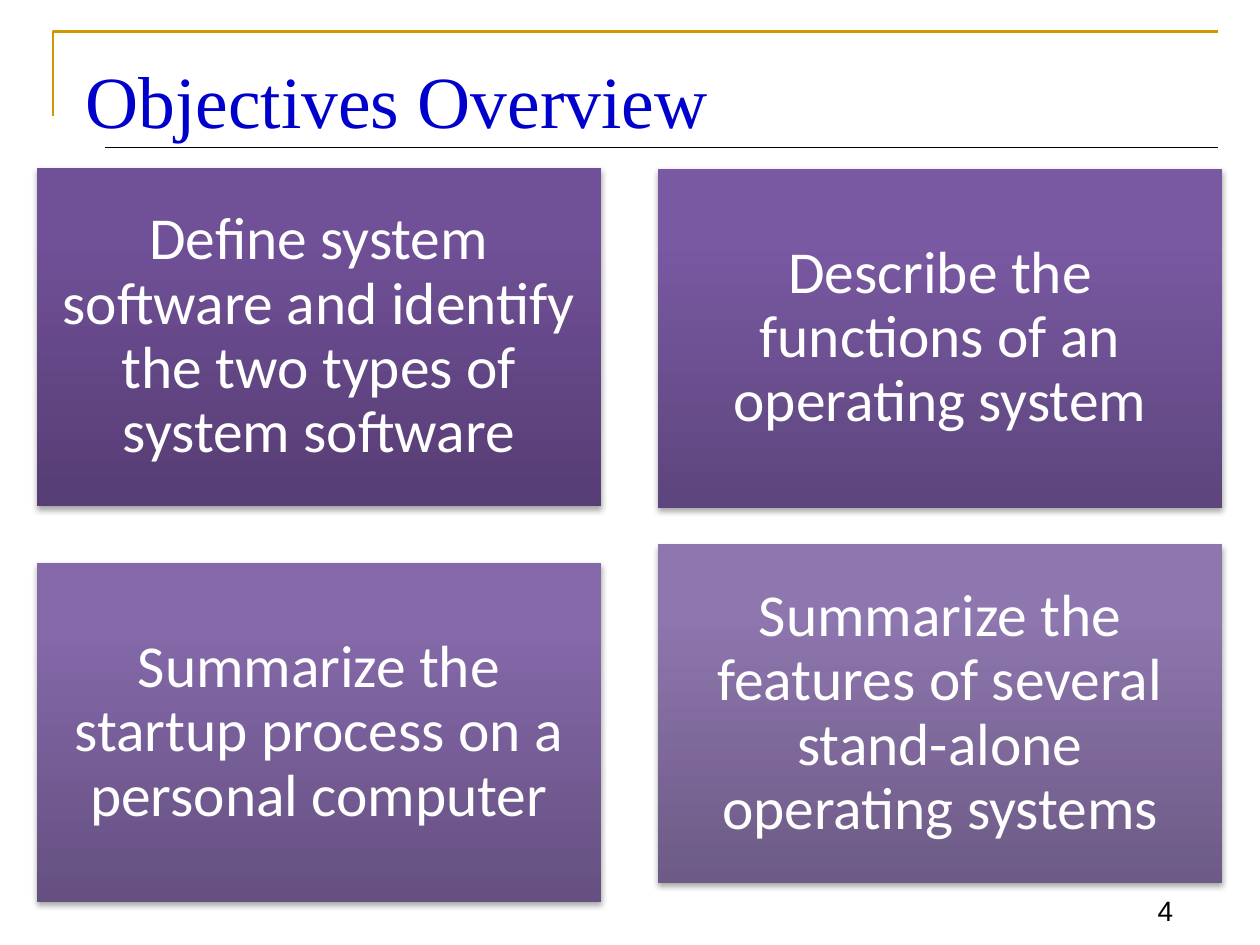
import copy
import pptx
import pptx.util
import pptx.oxml
import pptx.dml.color
import pptx.enum.shapes
import pptx.enum.text

Pt = pptx.util.Pt
RGB = pptx.dml.color.RGBColor
ALIGN = pptx.enum.text.PP_ALIGN
ANCHOR = pptx.enum.text.MSO_ANCHOR

GOLD = RGB(0xCC, 0x99, 0x00)
BLACK = RGB(0, 0, 0)
WHITE = RGB(0xFF, 0xFF, 0xFF)
BLUE = RGB(0, 0, 0xCC)

WIDE, HIGH = pptx.util.Inches(10), pptx.util.Inches(7.5)
NS = 'xmlns:a="http://schemas.openxmlformats.org/drawingml/2006/main"'
SHADOW = (f'<a:effectLst {NS}><a:outerShdw blurRad="39370" dist="22860" dir="5400000" '
          'rotWithShape="0"><a:srgbClr val="000000"><a:alpha val="35000"/></a:srgbClr>'
          '</a:outerShdw></a:effectLst>')

# Cards: column, top in % of the slide, text, gradient from bottom to top
CARDS = [
    (0, 17.73, "Define system software and identify the two types of system software",
     ("563D74", "705097", "704F99")),
    (1, 17.87, "Describe the functions of an operating system",
     ("5D457D", "7959A2", "7A58A4")),
    (0, 59.6, "Summarize the startup process on a personal computer",
     ("655081", "8468A8", "8467AA")),
    (1, 57.6, "Summarize the features of several stand-alone operating systems",
     ("6D5B86", "8E76AE", "8E75B0")),
]
STOPS = (0, 0.8, 1)
LEFT, STEP = 2.9, 49.3
CARD_W, CARD_H = 44.8, 35.87


def across(share):
    return round(WIDE * share / 100)


def down(share):
    return round(HIGH * share / 100)


def area(x, y, w, h):
    return across(x), down(y), across(w), down(h)


def write(shape, text, font, size, color, align, anchor):
    frame = shape.text_frame
    frame.word_wrap = True
    frame.vertical_anchor = anchor
    par = frame.paragraphs[0]
    par.alignment = align
    run = par.add_run()
    run.text = text
    run.font.name = font
    run.font.size = Pt(size)
    run.font.color.rgb = color
    return frame


def add_label(slide, box, *style):
    write(slide.shapes.add_textbox(*area(*box)), *style)


def add_frame(slide):
    # Gold corner around the title
    pen = slide.shapes.build_freeform(across(4.2), down(12.27))
    pen.add_line_segments([(across(4.2), down(3.33)), (across(96.7), down(3.33))],
                          close=False)
    edge = pen.convert_to_shape()
    edge.shadow.inherit = False
    edge.fill.background()
    edge.line.color.rgb = GOLD
    edge.line.width = Pt(1.5)

    # Rule below the title
    rule = slide.shapes.add_connector(
        pptx.enum.shapes.MSO_CONNECTOR.STRAIGHT,
        across(8.3), down(15.6), across(96.7), down(15.6))
    rule.line.color.rgb = BLACK
    rule.line.width = Pt(0.75)
    rule._element.spPr.append(pptx.oxml.parse_xml(f'<a:effectLst {NS}/>'))


def shade(fill, colors):
    fill.gradient()
    fill.gradient_angle = 90
    first = fill.gradient_stops[0]._gs
    first.addnext(copy.deepcopy(first))
    for stop, pos, color in zip(fill.gradient_stops, STOPS, colors):
        stop.position = pos
        stop.color.rgb = RGB.from_string(color)


def add_card(slide, col, top, text, colors):
    card = slide.shapes.add_shape(
        pptx.enum.shapes.MSO_SHAPE.RECTANGLE,
        *area(LEFT + col * STEP, top, CARD_W, CARD_H))
    shade(card.fill, colors)
    card.line.fill.background()
    card._element.spPr.append(pptx.oxml.parse_xml(SHADOW))
    frame = write(card, text, "Calibri", 34, WHITE, ALIGN.CENTER, ANCHOR.MIDDLE)
    frame.margin_left = frame.margin_right = across(1.4)
    frame.margin_top = frame.margin_bottom = across(1.4)
    frame.paragraphs[0].line_spacing = 0.9


def main():
    deck = pptx.Presentation()
    deck.slide_width, deck.slide_height = WIDE, HIGH
    slide = deck.slides.add_slide(deck.slide_layouts[6])

    add_frame(slide)
    # Page number and title
    add_label(slide, (87.5, 92.27, 6.6, 6.53), "4", "Arial", 16, BLACK,
              ALIGN.RIGHT, ANCHOR.BOTTOM)
    add_label(slide, (5.8, 4.4, 90.8, 12.13), "Objectives Overview",
              "Times New Roman", 42, BLUE, ALIGN.LEFT, ANCHOR.MIDDLE)
    for card in CARDS:
        add_card(slide, *card)

    deck.save("out.pptx")


if __name__ == "__main__":
    main()
